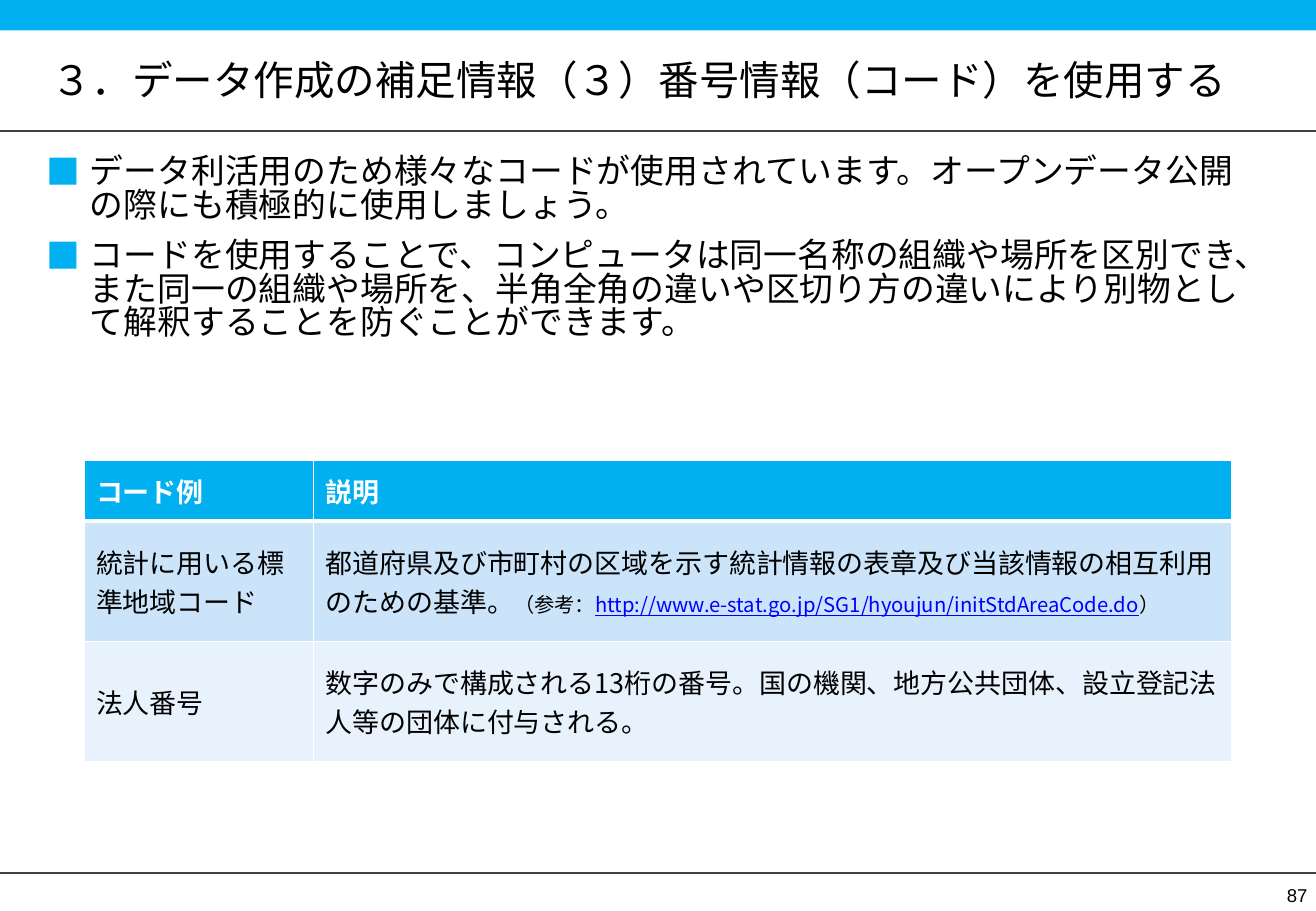
from lxml import etree
from pptx import Presentation
from pptx.dml.color import RGBColor
from pptx.enum import shapes, text
from pptx.oxml import ns
from pptx.util import Inches, Pt

COLORS = {"sky": "00B0F0", "rule": "404040", "black": "000000", "white": "FFFFFF",
          "row_dark": "CCE4F9", "row_light": "E7F2FC", "url": "0000FF"}
JP_FONT = "Noto Sans CJK JP"


def style(run, size, color="black", bold=False, font=JP_FONT):
    run.font.size = Pt(size)
    run.font.bold = bold
    run.font.name = font
    run.font.color.rgb = RGBColor.from_string(COLORS[color])
    etree.SubElement(run.font._element, ns.qn("a:ea"), typeface=font)


def set_frame(frame, anchor, side, vertical):
    frame.word_wrap = True
    frame.auto_size = text.MSO_AUTO_SIZE.NONE
    frame.vertical_anchor = anchor
    frame.margin_left = frame.margin_right = Inches(side)
    frame.margin_top = frame.margin_bottom = Inches(vertical)


prs = Presentation()
prs.slide_width, prs.slide_height = Inches(10.83), Inches(7.5)
slide = prs.slides.add_slide(prs.slide_layouts[5])

banner = slide.shapes.add_shape(shapes.MSO_SHAPE.RECTANGLE, 0, 0, prs.slide_width, Inches(0.25))
banner.shadow.inherit = False
banner.fill.solid()
banner.fill.fore_color.rgb = RGBColor.from_string(COLORS["sky"])
banner.line.fill.background()

for y in (7.19, 1.08):
    rule = slide.shapes.add_connector(shapes.MSO_CONNECTOR.STRAIGHT, 0, Inches(y),
                                      prs.slide_width, Inches(y))
    rule.line.color.rgb = RGBColor.from_string(COLORS["rule"])
    rule.line.width = Pt(1)
    etree.SubElement(rule._element.spPr, ns.qn("a:effectLst"))

page_number = slide.shapes.add_textbox(Inches(10.39), Inches(7.22), Inches(0.44), Inches(0.28)).text_frame
set_frame(page_number, text.MSO_ANCHOR.BOTTOM, 0.07, 0.04)
page_number.text = "87"
page_number.paragraphs[0].alignment = text.PP_ALIGN.RIGHT
style(page_number.paragraphs[0].runs[0], 11, font="Arial")

title = slide.shapes.title
title.left, title.top, title.width, title.height = map(Inches, (0.42, 0.33, 9.99, 0.64))
set_frame(title.text_frame, text.MSO_ANCHOR.MIDDLE, 0, 0)
title.text_frame.text = "３．データ作成の補足情報（３）番号情報（コード）を使用する"
title.text_frame.paragraphs[0].alignment = text.PP_ALIGN.LEFT
style(title.text_frame.paragraphs[0].runs[0], 24)

points = [
    "データ利活用のため様々なコードが使用されています。オープンデータ公開の際にも積極的に使用しましょう。",
    "コードを使用することで、コンピュータは同一名称の組織や場所を区別でき、また同一の組織や場所を、"
    "半角全角の違いや区切り方の違いにより別物として解釈することを防ぐことができます。",
]
body = slide.shapes.add_textbox(Inches(0.38), Inches(1.25), Inches(10), Inches(5.76)).text_frame
set_frame(body, text.MSO_ANCHOR.TOP, 0, 0.04)
body.text = "\n".join(points)
for index, point in enumerate(body.paragraphs):
    props = point._element.get_or_add_pPr()
    props.set("marL", str(Inches(0.36)))
    props.set("indent", str(-Inches(0.36)))
    bullet_color = etree.SubElement(props, ns.qn("a:buClr"))
    etree.SubElement(bullet_color, ns.qn("a:srgbClr"), val=COLORS["sky"])
    etree.SubElement(props, ns.qn("a:buFont"), typeface=JP_FONT)
    etree.SubElement(props, ns.qn("a:buChar"), char="■")
    point.line_spacing = 0.83
    point.space_before = Pt(10 if index else 0)
    style(point.runs[0], 20)

rows = [
    ["コード例", [("説明", 16, "white")]],
    ["統計に用いる標準地域コード", [
        ("都道府県及び市町村の区域を示す統計情報の表章及び当該情報の相互利用のための基準。", 16, "black"),
        ("（参考：", 12, "black"),
        ("http://www.e-stat.go.jp/SG1/hyoujun/initStdAreaCode.do", 12, "url"),
        ("）", 12, "black")]],
    ["法人番号", [
        ("数字のみで構成される13桁の番号。国の機関、地方公共団体、設立登記法人等の団体に付与される。", 16, "black")]],
]
row_fills = ["sky", "row_dark", "row_light"]
codes = slide.shapes.add_table(3, 2, Inches(0.69), Inches(3.79), Inches(9.45), Inches(2.48)).table
for column, width in zip(codes.columns, (1.89, 7.56)):
    column.width = Inches(width)
for row, height in zip(codes.rows, (0.5, 0.99, 0.99)):
    row.height = Inches(height)

for r, (code, description) in enumerate(rows):
    header = r == 0
    name_runs = [(code, 16, "white" if header else "black")]
    for c, pieces in enumerate((name_runs, description)):
        cell = codes.cell(r, c)
        cell.vertical_anchor = text.MSO_ANCHOR.MIDDLE
        for wording, size, color in pieces:
            run = cell.text_frame.paragraphs[0].add_run()
            run.text = wording
            style(run, size, color, header)
            run.font.underline = color == "url"
        for side in "LRTB":
            thick = (r, side) in ((0, "B"), (1, "T"))
            border = etree.SubElement(cell._tc.get_or_add_tcPr(), ns.qn("a:ln" + side),
                                      w=str(Pt(3 if thick else 1)))
            border_fill = etree.SubElement(border, ns.qn("a:solidFill"))
            etree.SubElement(border_fill, ns.qn("a:srgbClr"), val=COLORS["white"])
        cell.fill.solid()
        cell.fill.fore_color.rgb = RGBColor.from_string(COLORS[row_fills[r]])

prs.save("out.pptx")
